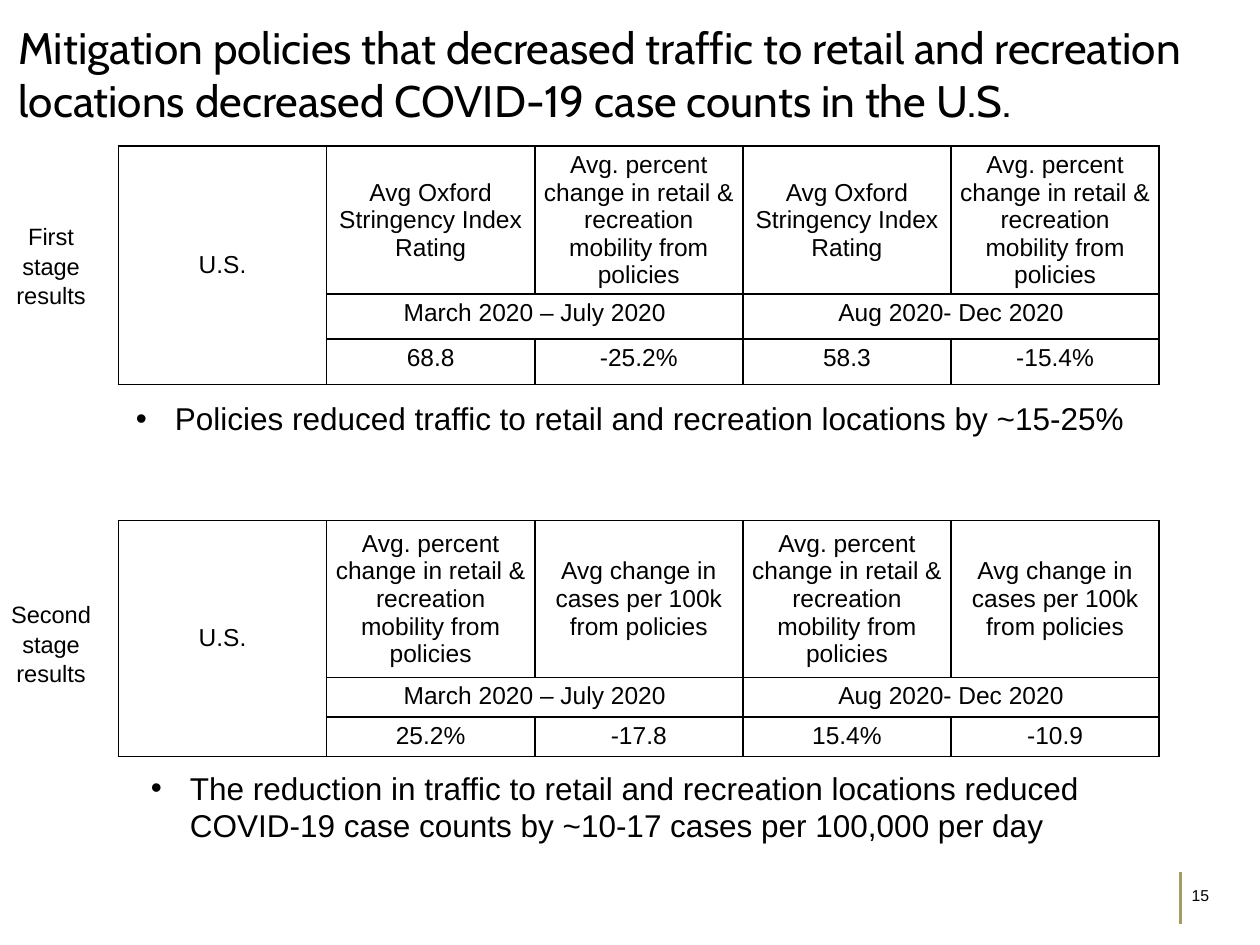
from lxml import etree
from pptx import Presentation
from pptx import util as u
from pptx.dml.color import RGBColor
from pptx.enum import shapes, text
from pptx.oxml.ns import qn

TITLE = ("Mitigation policies that decreased traffic to retail and recreation "
         "locations decreased COVID-19 case counts in the U.S.")
PAGE = "15"
COUNTRY = "U.S."
PERIODS = ["March 2020 – July 2020", "Aug 2020- Dec 2020"]
STRINGENCY = "Avg Oxford Stringency Index Rating"
MOBILITY = "Avg. percent change in retail & recreation mobility from policies"
CASES = "Avg change in cases per 100k from policies"

STAGES = [
    {
        "label": ["First", "stage", "results"],
        "label_box": (-0.17, 1.7, 1.15, 0.78),
        "measures": [STRINGENCY, MOBILITY],
        "values": ["68.8", "-25.2%", "58.3", "-15.4%"],
        "top": 1.16,
        "rows": [1.17, 0.36, 0.36],
        "finding": "Policies reduced traffic to retail and recreation locations by ~15-25%",
        "finding_box": (0.98, 3.12, 8.12, 0.4),
        "finding_wrap": False,
    },
    {
        "label": ["Second", "stage", "results"],
        "label_box": (-0.29, 4.7, 1.39, 0.78),
        "measures": [MOBILITY, CASES],
        "values": ["25.2%", "-17.8", "15.4%", "-10.9"],
        "top": 4.13,
        "rows": [1.17, 0.3, 0.3],
        "finding": ("The reduction in traffic to retail and recreation locations reduced "
                    "COVID-19 case counts by ~10-17 cases per 100,000 per day"),
        "finding_box": (1.1, 6.05, 8.26, 0.71),
        "finding_wrap": True,
    },
]

THEME = {
    "ink": RGBColor(0, 0, 0),
    "accent": RGBColor(0xA5, 0x9A, 0x60),
    "border": "000000",
    "title": ("Cabin", 25.2),
    "table": ("Arial", 14),
    "label": ("Arial", 13.5),
    "finding": ("Arial", 18),
    "page": ("Arial", 9),
}

SLIDE_W, SLIDE_H = 10, 7.5
TABLE_LEFT, TABLE_W, COLUMNS = 0.94, 8.26, 5
INDENT = 0.31
CELL_FORMAT = {
    "margin_left": u.Inches(0.07), "margin_right": u.Inches(0.07),
    "margin_top": u.Inches(0.04), "margin_bottom": u.Inches(0.04),
}


def apply(target, formats):
    for name, value in formats.items():
        setattr(target, name, value)


def style(paragraph, role, **formats):
    face, size = THEME[role]
    apply(paragraph, formats)
    apply(paragraph.font, {"name": face, "size": u.Pt(size)})
    paragraph.font.color.rgb = THEME["ink"]


def add_words(slide, box, lines, role, wrap=True, grow=False, bullet=False, **formats):
    frame = slide.shapes.add_textbox(*map(u.Inches, box)).text_frame
    fit = text.MSO_AUTO_SIZE.SHAPE_TO_FIT_TEXT if grow else text.MSO_AUTO_SIZE.NONE
    apply(frame, {"text": "\n".join(lines), "word_wrap": wrap, "auto_size": fit})
    for paragraph in frame.paragraphs:
        if bullet:
            props = paragraph._p.get_or_add_pPr()
            props.set("marL", str(u.Inches(INDENT)))
            props.set("indent", str(-u.Inches(INDENT)))
            etree.SubElement(props, qn("a:buFont"), typeface="Arial")
            etree.SubElement(props, qn("a:buChar"), char="•")
        style(paragraph, role, **formats)


def add_borders(cell):
    props = cell._tc.get_or_add_tcPr()
    for side in ("lnL", "lnR", "lnT", "lnB"):
        edge = etree.SubElement(props, qn(f"a:{side}"), w=str(u.Pt(1)))
        fill = etree.SubElement(edge, qn("a:solidFill"))
        etree.SubElement(fill, qn("a:srgbClr"), val=THEME["border"])


def add_results(slide, stage):
    heights = stage["rows"]
    area = (TABLE_LEFT, stage["top"], TABLE_W, sum(heights))
    grid = slide.shapes.add_table(len(heights), COLUMNS, *map(u.Inches, area)).table
    apply(grid, {"first_row": False, "horz_banding": False})
    for column in grid.columns:
        column.width = u.Inches(TABLE_W / COLUMNS)
    for row, height in zip(grid.rows, heights):
        row.height = u.Inches(height)

    grid.cell(0, 0).merge(grid.cell(2, 0))
    for first in (1, 3):
        grid.cell(1, first).merge(grid.cell(1, first + 1))
    content = [
        [COUNTRY] + stage["measures"] * len(PERIODS),
        ["", PERIODS[0], "", PERIODS[1], ""],
        [""] + stage["values"],
    ]
    for r, entries in enumerate(content):
        for c, entry in enumerate(entries):
            cell = grid.cell(r, c)
            add_borders(cell)
            cell.fill.background()
            apply(cell, CELL_FORMAT)
            cell.vertical_anchor = text.MSO_ANCHOR.TOP if r else text.MSO_ANCHOR.MIDDLE
            cell.text = entry
            style(cell.text_frame.paragraphs[0], "table", alignment=text.PP_ALIGN.CENTER)


def add_page_mark(slide):
    add_words(slide, (9.36, 6.98, 0.39, 0.27), [PAGE], "page")
    ends = (9.37, 6.92, 9.37, 7.33)
    rule = slide.shapes.add_connector(shapes.MSO_CONNECTOR.STRAIGHT, *map(u.Inches, ends))
    rule.line.color.rgb = THEME["accent"]
    rule.line.width = u.Pt(2)
    etree.SubElement(rule._element.spPr, qn("a:effectLst"))


def main():
    deck = Presentation()
    apply(deck, {"slide_width": u.Inches(SLIDE_W), "slide_height": u.Inches(SLIDE_H)})
    slide = deck.slides.add_slide(deck.slide_layouts[6])
    add_page_mark(slide)
    add_words(slide, (0.05, 0.11, 9.77, 0.78), [TITLE], "title")
    for stage in STAGES:
        add_results(slide, stage)
        add_words(slide, stage["label_box"], stage["label"], "label", grow=True,
                  alignment=text.PP_ALIGN.CENTER, line_spacing=1.05)
        add_words(slide, stage["finding_box"], [stage["finding"]], "finding",
                  wrap=stage["finding_wrap"], grow=True, bullet=True)
    deck.save("out.pptx")


if __name__ == "__main__":
    main()
